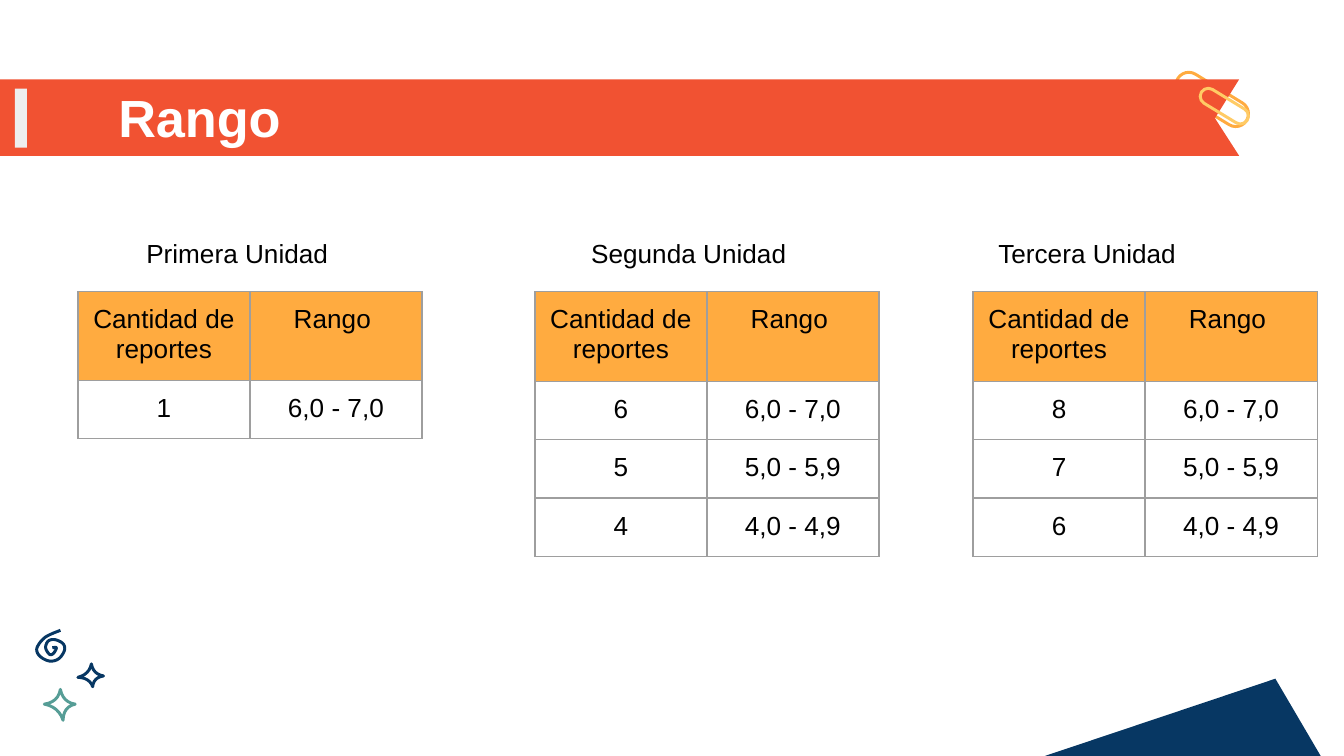
"""Build the "Rango" slide with one grade range table per unit."""
from lxml import etree
from pptx import Presentation
from pptx.dml.color import RGBColor
from pptx.enum import shapes, text
from pptx.oxml import ns
from pptx.util import Inches, Pt

COLORS = {
    "banner": "F15232", "accent": "EEEEEE", "header": "FFAB40", "clip": "FFCB65",
    "navy": "073763", "teal": "569D96", "border": "9E9E9E", "black": "000000",
    "white": "FFFFFF",
}
FONT = "Arial"
MARGIN = 0.1
COLUMN_WIDTH, HEADER_HEIGHT, ROW_HEIGHT = 1.28, 0.66, 0.43
TABLE_TOP, LABEL_TOP = 2.17, 1.72
HEADER = ("Cantidad de reportes", "Rango ")
RANGES = ("6,0 - 7,0", "5,0 - 5,9", "4,0 - 4,9")
UNITS = (
    ("Primera Unidad", 0.99, 1.9, 0.58, ("1",)),
    ("Segunda Unidad", 4.3, 1.96, 3.98, ("6", "5", "4")),
    ("Tercera Unidad", 7.33, 2.27, 7.24, ("8", "7", "6")),
)
BANNER = ((0, 0.59), (0, 1.16), (9.22, 1.16), (9.04, 0.88), (9.22, 0.59))
CORNER = ((9.49, 5.05), (7.76, 5.63), (9.83, 5.63))
SPIRAL = (
    (0.45, 4.69), (0.34, 4.74), (0.28, 4.81), (0.28, 4.86), (0.32, 4.9), (0.38, 4.92),
    (0.44, 4.9), (0.48, 4.84), (0.47, 4.79), (0.41, 4.76), (0.36, 4.77), (0.34, 4.82),
    (0.37, 4.87), (0.4, 4.86), (0.42, 4.82), (0.39, 4.82),
)
TEAL_STAR = ((0.45, 5.13), (0.56, 5.24), (0.47, 5.36), (0.33, 5.24))
NAVY_STAR = ((0.68, 4.94), (0.77, 5.03), (0.69, 5.11), (0.58, 5.04))


def color(name):
    """Return the named colour."""
    return RGBColor.from_string(COLORS[name])


def style_shape(shape, fill=None, line=None, width=1.6):
    """Set fill and line, and drop the shadow."""
    shape.shadow.inherit = False
    if fill:
        shape.fill.solid()
        shape.fill.fore_color.rgb = color(fill)
    else:
        shape.fill.background()
    if line:
        shape.line.color.rgb = color(line)
        shape.line.width = Pt(width)
    else:
        shape.line.fill.background()


def add_outline(slide, points, closed=True, **style):
    """Draw a freeform through points given in inches."""
    corners = [(Inches(x), Inches(y)) for x, y in points]
    builder = slide.shapes.build_freeform(*corners[0], scale=1.0)
    builder.add_line_segments(corners[1:], close=closed)
    style_shape(builder.convert_to_shape(), **style)


def smooth_curve(points, steps=6):
    """Sample a Catmull-Rom curve through the points."""
    padded = (points[0], *points, points[-1])
    curve = []
    for a, b, c, d in zip(padded, padded[1:], padded[2:], padded[3:]):
        for step in range(steps):
            t = step / steps
            curve.append(tuple(
                q + t / 2 * (r - p + t * (2 * p - 5 * q + 4 * r - s + t * (3 * (q - r) + s - p)))
                for p, q, r, s in zip(a, b, c, d)
            ))
    return curve + [points[-1]]


def star_curve(tips, steps=6, pull=0.7):
    """Join the tips by arcs that bend towards the centre."""
    center = [sum(axis) / len(tips) for axis in zip(*tips)]
    curve = []
    for start, end in zip(tips, tips[1:] + tips[:1]):
        for step in range(steps):
            t = step / steps
            curve.append(tuple(
                (1 - t) ** 2 * a + t * t * b
                + 2 * t * (1 - t) * (pull * m + (1 - pull) * (a + b) / 2)
                for a, b, m in zip(start, end, center)
            ))
    return curve


def add_clip_loop(slide, center, length, breadth, line):
    """Draw one slanted loop of the paper clip."""
    x, y = center
    loop = slide.shapes.add_shape(
        shapes.MSO_SHAPE.ROUNDED_RECTANGLE, Inches(x - length / 2), Inches(y - breadth / 2),
        Inches(length), Inches(breadth))
    loop.adjustments[0] = 0.5
    loop.rotation = 31.4
    style_shape(loop, line=line)


def add_run(paragraph, words, size=14, name="black", bold=False):
    """Add one formatted run."""
    run = paragraph.add_run()
    run.text = words
    run.font.name = FONT
    run.font.size = Pt(size)
    run.font.bold = bold
    run.font.color.rgb = color(name)


def set_margins(holder):
    """Give a cell or text frame equal margins."""
    for side in ("left", "right", "top", "bottom"):
        setattr(holder, f"margin_{side}", Inches(MARGIN))


def place_title(slide, words):
    """Fill the title placeholder and bring it in front of the banner."""
    title = slide.shapes.title
    title.left, title.top = Inches(0.78), Inches(0.61)
    title.width, title.height = Inches(8.44), Inches(0.52)
    frame = title.text_frame
    frame.auto_size = text.MSO_AUTO_SIZE.NONE
    frame.word_wrap = True
    frame.vertical_anchor = text.MSO_ANCHOR.MIDDLE
    set_margins(frame)
    frame.paragraphs[0].alignment = text.PP_ALIGN.LEFT
    add_run(frame.paragraphs[0], words, 28, "white", True)
    slide.shapes.element.append(title.element)


def add_label(slide, words, left, width):
    """Add the heading above a table."""
    box = slide.shapes.add_textbox(Inches(left), Inches(LABEL_TOP), Inches(width), Inches(0.34))
    box.text_frame.word_wrap = True
    box.text_frame.auto_size = text.MSO_AUTO_SIZE.SHAPE_TO_FIT_TEXT
    add_run(box.text_frame.paragraphs[0], words)


def add_borders(cell):
    """Draw a thin line on all four sides of a cell."""
    properties = cell._tc.get_or_add_tcPr()
    for side in ("lnL", "lnR", "lnT", "lnB"):
        line = etree.SubElement(properties, ns.qn(f"a:{side}"), w=str(Pt(0.75)))
        fill = etree.SubElement(line, ns.qn("a:solidFill"))
        etree.SubElement(fill, ns.qn("a:srgbClr"), val=COLORS["border"])


def fill_cell(cell, words, is_header):
    """Write and format one table cell."""
    set_margins(cell)
    add_borders(cell)
    if is_header:
        cell.fill.solid()
        cell.fill.fore_color.rgb = color("header")
    else:
        cell.fill.background()
    paragraph = cell.text_frame.paragraphs[0]
    paragraph.alignment = text.PP_ALIGN.CENTER
    add_run(paragraph, words)


def add_range_table(slide, left, counts):
    """Add the table that maps report counts to grade ranges."""
    rows = [HEADER, *zip(counts, RANGES)]
    heights = [HEADER_HEIGHT] + [ROW_HEIGHT] * len(counts)
    table = slide.shapes.add_table(
        len(rows), 2, Inches(left), Inches(TABLE_TOP),
        Inches(2 * COLUMN_WIDTH), Inches(sum(heights))).table
    table.first_row = table.horz_banding = False
    for column in table.columns:
        column.width = Inches(COLUMN_WIDTH)
    for index, (row, height) in enumerate(zip(rows, heights)):
        table.rows[index].height = Inches(height)
        for position, words in enumerate(row):
            fill_cell(table.cell(index, position), words, index == 0)


def add_decoration(slide):
    """Draw the banner, paper clip, corner and doodles."""
    add_clip_loop(slide, (9.02, 0.74), 0.6, 0.19, "header")
    add_outline(slide, BANNER, fill="banner")
    accent = slide.shapes.add_shape(
        shapes.MSO_SHAPE.RECTANGLE, Inches(0.11), Inches(0.66), Inches(0.09), Inches(0.44))
    style_shape(accent, fill="accent")
    add_clip_loop(slide, (9.11, 0.79), 0.4, 0.12, "clip")
    add_outline(slide, CORNER, fill="navy")
    add_outline(slide, smooth_curve(SPIRAL), closed=False, line="navy")
    add_outline(slide, star_curve(TEAL_STAR), line="teal")
    add_outline(slide, star_curve(NAVY_STAR), line="navy")


def main():
    """Build and save the slide."""
    presentation = Presentation()
    presentation.slide_width = Inches(10)
    presentation.slide_height = presentation.slide_width * 9 // 16
    slide = presentation.slides.add_slide(presentation.slide_layouts[5])
    add_decoration(slide)
    place_title(slide, "Rango")
    for label, label_left, label_width, table_left, counts in UNITS:
        add_range_table(slide, table_left, counts)
        add_label(slide, label, label_left, label_width)
    presentation.save("out.pptx")


if __name__ == "__main__":
    main()
